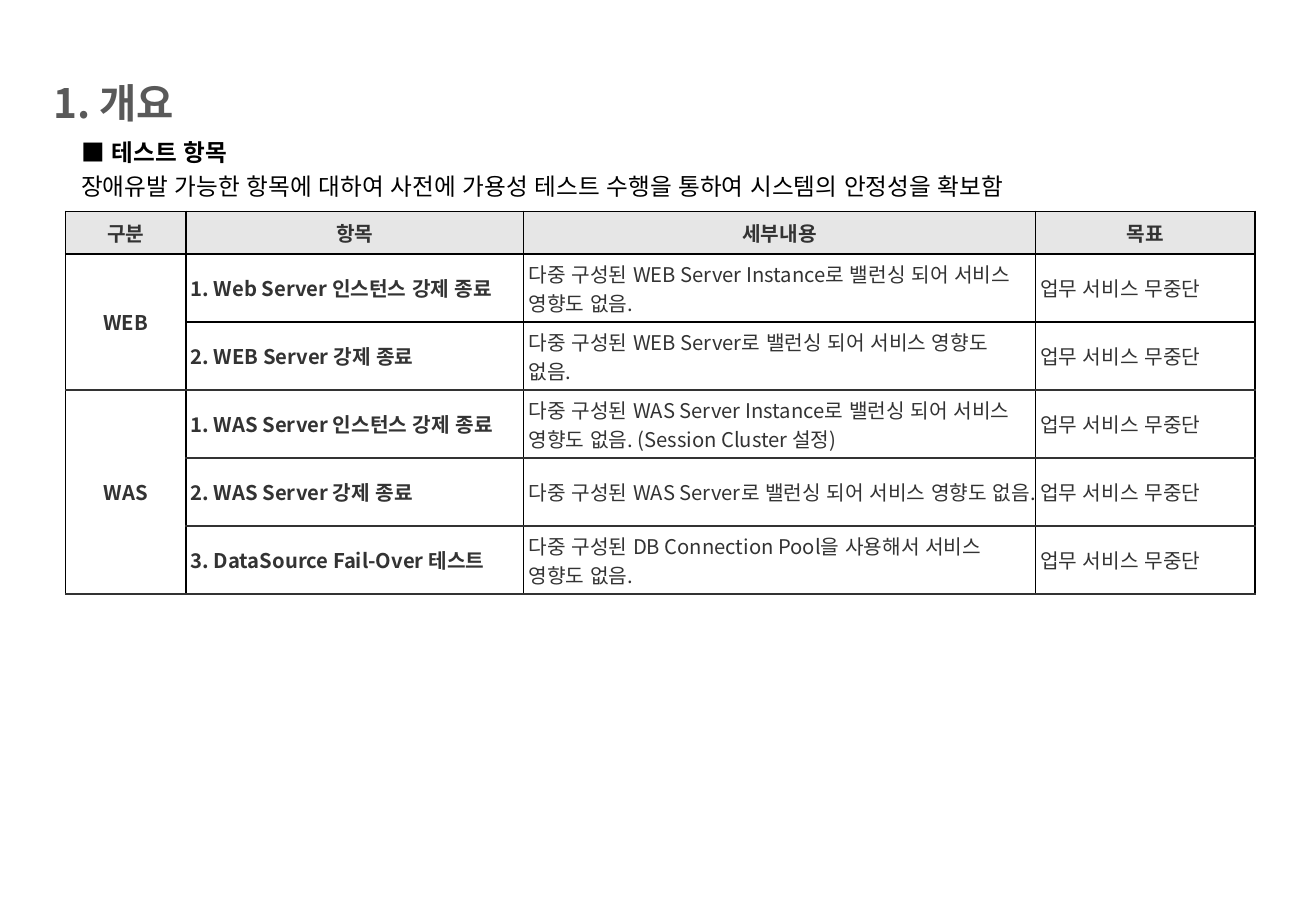
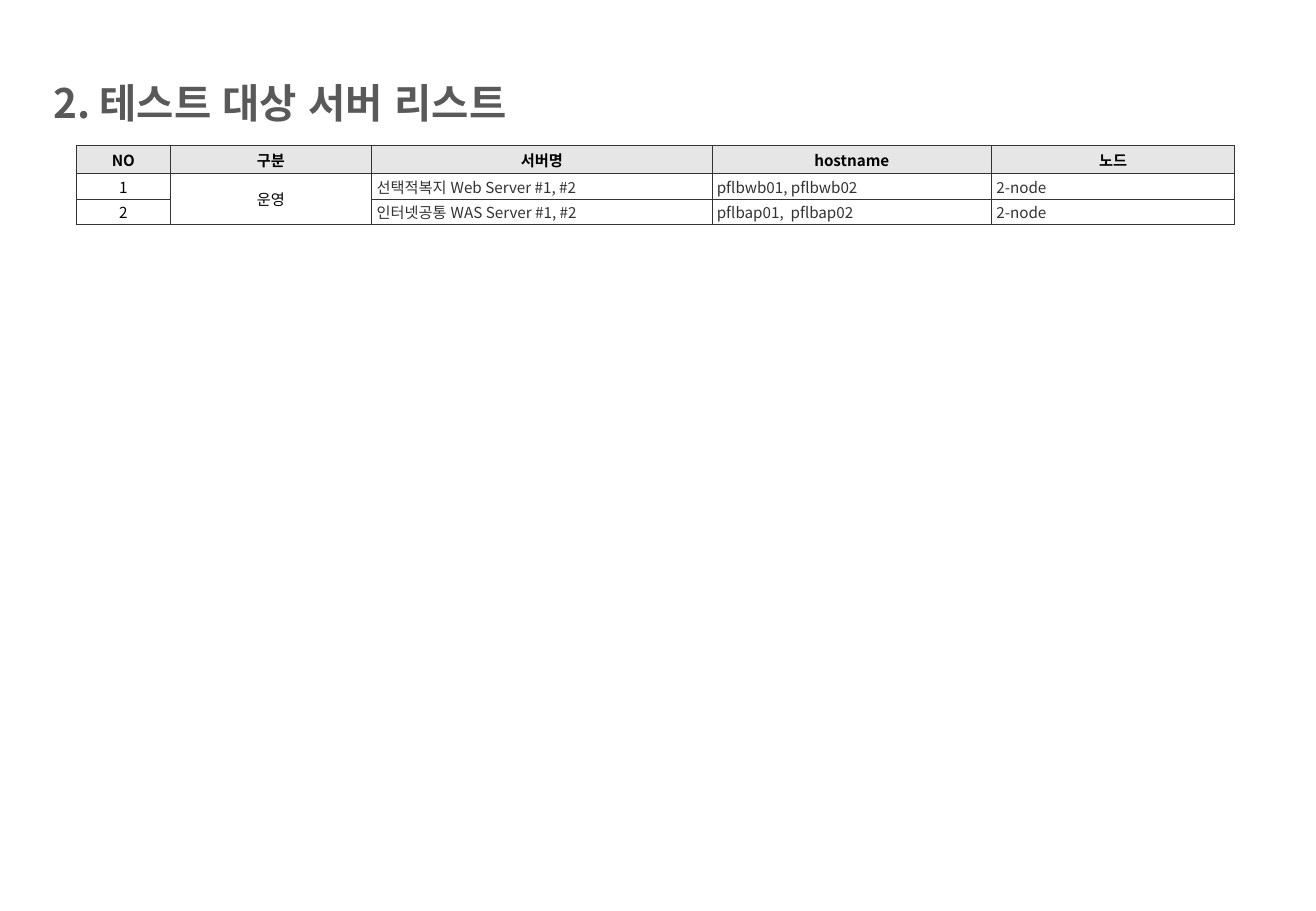
from dataclasses import dataclass

from lxml.etree import SubElement
from pptx import Presentation
from pptx.dml.color import RGBColor
from pptx.enum.lang import MSO_LANGUAGE_ID
from pptx.enum.text import MSO_ANCHOR, PP_ALIGN
from pptx.oxml.ns import qn
from pptx.slide import Slide
from pptx.table import _Cell
from pptx.text.text import TextFrame
from pptx.util import Inches, Pt

FONT = "Noto Sans CJK KR"
COLORS = {
    "title": "595959",
    "black": "000000",
    "text": "333333",
    "header": "E6E6E6",
    "white": "FFFFFF",
}


@dataclass(frozen=True)
class Column:
    heading: str
    width: float
    centered: bool = False
    bold: bool = False
    color: str = "text"


@dataclass(frozen=True)
class Grid:
    left: float
    top: float
    columns: list[Column]
    rows: list[tuple[str, ...]]
    groups: list[tuple[int, int, int]]
    header_height: float
    row_height: float
    size: float
    header_color: str
    header_inset: tuple[float, float]
    body_inset: tuple[float, float]
    line_width: float
    vertical_line: str
    horizontal_lines: list[str]


def write(frame: TextFrame, text: str, *, size: float, color: str = "black",
          bold: bool = False, centered: bool = False, new: bool = False,
          line_spacing: float = 1.0) -> None:
    paragraph = frame.add_paragraph() if new else frame.paragraphs[0]
    paragraph.alignment = PP_ALIGN.CENTER if centered else PP_ALIGN.LEFT
    paragraph.line_spacing = line_spacing
    run = paragraph.add_run()
    run.text = text
    run.font.size = Pt(size)
    run.font.bold = bold
    run.font.language_id = MSO_LANGUAGE_ID.KOREAN
    run.font.color.rgb = RGBColor.from_string(COLORS[color])
    run.font.name = FONT
    latin = run.font._element.find(qn("a:latin"))
    east_asian = SubElement(run.font._element, qn("a:ea"), typeface=FONT)
    latin.addnext(east_asian)


def add_frame(slide: Slide, left: float, top: float, width: float, height: float,
              inset_top: float) -> TextFrame:
    frame = slide.shapes.add_textbox(
        Inches(left), Inches(top), Inches(width), Inches(height)).text_frame
    frame.word_wrap = True
    frame.margin_top = Inches(inset_top)
    return frame


def add_title(slide: Slide, text: str) -> None:
    frame = add_frame(slide, 0.34, 0.28, 8.06, 0.73, inset_top=0.36)
    frame.margin_bottom = 0
    write(frame, text, size=24, color="title", bold=True)


def set_borders(cell: _Cell, width: float, side: str, top: str, bottom: str) -> None:
    properties = cell._tc.get_or_add_tcPr()
    for edge, color in (("L", side), ("R", side), ("T", top), ("B", bottom)):
        line = SubElement(properties, qn(f"a:ln{edge}"), w=str(Pt(width)))
        fill = SubElement(line, qn("a:solidFill"))
        SubElement(fill, qn("a:srgbClr"), val=COLORS[color])


def add_grid(slide: Slide, grid: Grid) -> None:
    heights = [grid.header_height] + [grid.row_height] * len(grid.rows)
    table = slide.shapes.add_table(
        len(heights), len(grid.columns), Inches(grid.left), Inches(grid.top),
        Inches(sum(column.width for column in grid.columns)),
        Inches(sum(heights))).table
    table.first_row = False
    table.horz_banding = False
    for index, column in enumerate(grid.columns):
        table.columns[index].width = Inches(column.width)
    for index, height in enumerate(heights):
        table.rows[index].height = Inches(height)
    for column, first, last in grid.groups:
        table.cell(first, column).merge(table.cell(last, column))

    headings = tuple(column.heading for column in grid.columns)
    for row, texts in enumerate([headings, *grid.rows]):
        is_header = row == 0
        horizontal, vertical = grid.header_inset if is_header else grid.body_inset
        for index, (column, text) in enumerate(zip(grid.columns, texts)):
            cell = table.cell(row, index)
            cell.vertical_anchor = MSO_ANCHOR.MIDDLE
            cell.margin_left = cell.margin_right = Inches(horizontal)
            cell.margin_top = cell.margin_bottom = Inches(vertical)
            set_borders(cell, grid.line_width, grid.vertical_line,
                        *grid.horizontal_lines[row:row + 2])
            cell.fill.solid()
            cell.fill.fore_color.rgb = RGBColor.from_string(
                COLORS["header" if is_header else "white"])
            if text:
                write(cell.text_frame, text, size=grid.size,
                      color=grid.header_color if is_header else column.color,
                      bold=is_header or column.bold,
                      centered=is_header or column.centered)


GOAL = "업무 서비스 무중단"
TEST_ITEMS = Grid(
    left=0.54, top=1.74,
    columns=[
        Column("구분", 0.99, centered=True, bold=True),
        Column("항목", 2.78, bold=True),
        Column("세부내용", 4.21),
        Column("목표", 1.81),
    ],
    rows=[
        ("WEB", "1. Web Server 인스턴스 강제 종료",
         "다중 구성된 WEB Server Instance로 밸런싱 되어 서비스 영향도 없음.", GOAL),
        ("", "2. WEB Server 강제 종료",
         "다중 구성된 WEB Server로 밸런싱 되어 서비스 영향도 없음.", GOAL),
        ("WAS", "1. WAS Server 인스턴스 강제 종료",
         "다중 구성된 WAS Server Instance로 밸런싱 되어 서비스 영향도 없음. "
         "(Session Cluster 설정)", GOAL),
        ("", "2. WAS Server 강제 종료",
         "다중 구성된 WAS Server로 밸런싱 되어 서비스 영향도 없음.", GOAL),
        ("", "3. DataSource Fail-Over 테스트",
         "다중 구성된 DB Connection Pool을 사용해서 서비스 영향도 없음.", GOAL),
    ],
    groups=[(0, 1, 2), (0, 3, 5)],
    header_height=0.35, row_height=0.56, size=12, header_color="text",
    header_inset=(0.1, 0.05), body_inset=(0.04, 0.04),
    line_width=1, vertical_line="black",
    horizontal_lines=["black"] * 3 + ["text"] * 4,
)
SERVERS = Grid(
    left=0.63, top=1.2,
    columns=[
        Column("NO", 0.77, centered=True, color="black"),
        Column("구분", 1.66, centered=True, color="black"),
        Column("서버명", 2.8),
        Column("hostname", 2.3),
        Column("노드", 2),
    ],
    rows=[
        ("1", "운영", "선택적복지 Web Server #1, #2", "pflbwb01, pflbwb02", "2-node"),
        ("2", "", "인터넷공통 WAS Server #1, #2", "pflbap01,  pflbap02", "2-node"),
    ],
    groups=[(1, 1, 2)],
    header_height=0.23, row_height=0.21, size=9, header_color="black",
    header_inset=(0.04, 0), body_inset=(0.04, 0),
    line_width=0.5, vertical_line="text", horizontal_lines=["text"] * 4,
)


def main() -> None:
    deck = Presentation()
    deck.slide_width, deck.slide_height = Inches(10.83), Inches(7.5)
    blank = deck.slide_layouts[6]

    overview = deck.slides.add_slide(blank)
    add_title(overview, "1. 개요")
    add_grid(overview, TEST_ITEMS)
    summary = add_frame(overview, 0.57, 1.05, 9.45, 0.41, inset_top=0.04)
    write(summary, "■ 테스트 항목", size=14, bold=True, line_spacing=1.2)
    write(summary, "장애유발 가능한 항목에 대하여 사전에 가용성 테스트 수행을 통하여 "
          "시스템의 안정성을 확보함", size=14, new=True, line_spacing=1.2)

    server_list = deck.slides.add_slide(blank)
    add_grid(server_list, SERVERS)
    add_title(server_list, "2. 테스트 대상 서버 리스트")

    deck.save("out.pptx")


if __name__ == "__main__":
    main()
